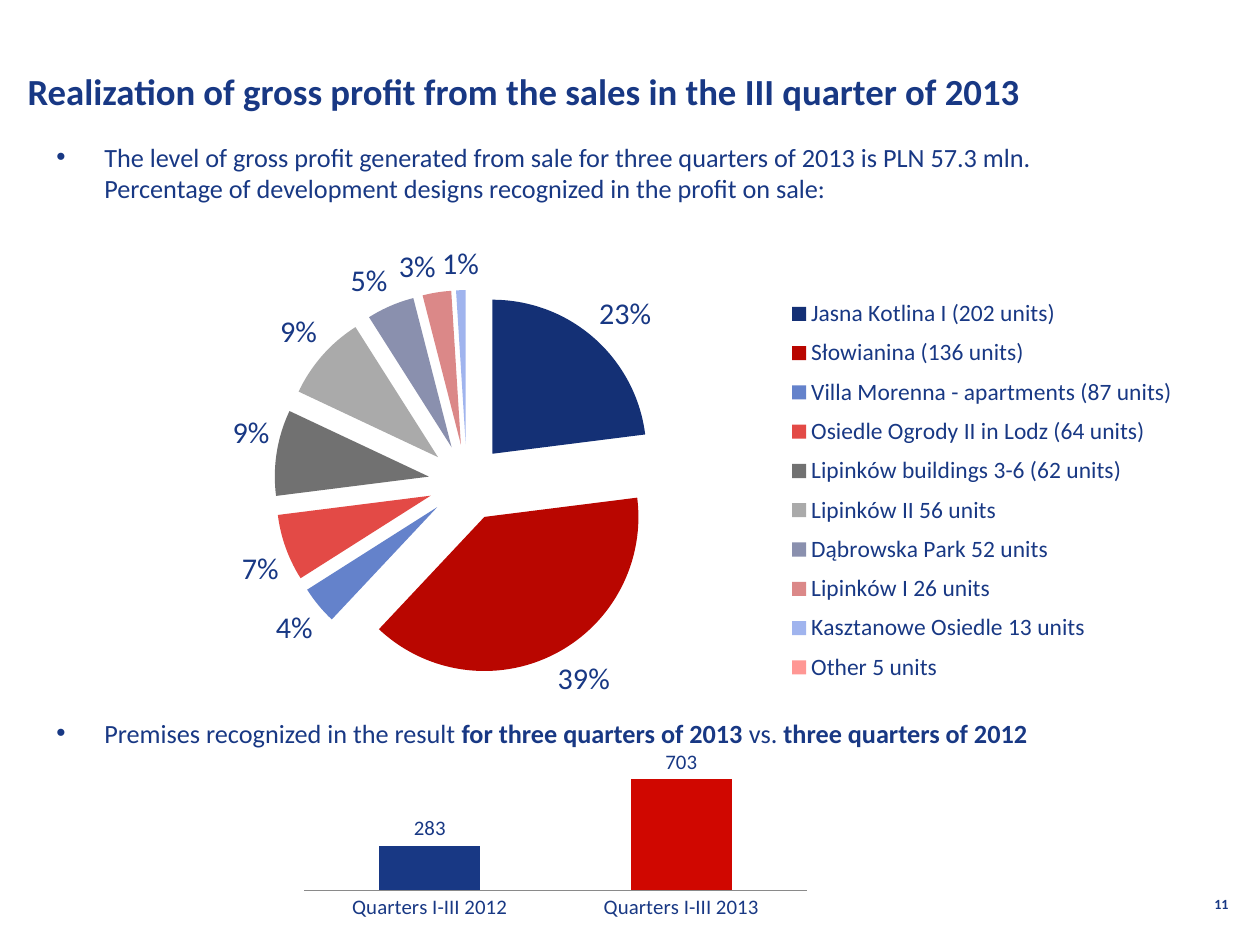
from dataclasses import dataclass

from lxml import etree
from pptx import Presentation
from pptx.chart.data import CategoryChartData
from pptx.dml.color import RGBColor as RGB
from pptx.enum.chart import XL_CHART_TYPE as CT, XL_LABEL_POSITION as LP
from pptx.enum.chart import XL_LEGEND_POSITION as LEG, XL_TICK_MARK as TM
from pptx.enum.text import MSO_ANCHOR as ANCHOR, PP_ALIGN as ALIGN
from pptx.oxml.ns import qn
from pptx.util import Inches, Pt


@dataclass(frozen=True)
class Theme:
    font: str = "Calibri"
    navy: str = "183884"
    red: str = "D00700"
    axis: str = "8A8A8A"
    slices: tuple = ("143075", "B90600", "6482CB", "E34A46", "717171",
                     "AAAAAA", "8A90AE", "DB8888", "A0B4EE", "FF9794")
    title: float = 21
    body: float = 15
    number: float = 8
    pie_label: float = 17.2
    legend: float = 13.4
    column_label: float = 11.9


T = Theme()
COLS, ROWS = 40, 30
WIDTH, HEIGHT = Inches(10), Inches(7.5)

PROFIT_SHARES = {
    "Jasna Kotlina I (202 units)": 23,
    "Słowianina (136 units)": 39,
    "Villa Morenna - apartments (87 units)": 4,
    "Osiedle Ogrody II in Lodz (64 units)": 7,
    "Lipinków buildings 3-6 (62 units)": 9,
    "Lipinków II 56 units": 9,
    "Dąbrowska Park 52 units": 5,
    "Lipinków I 26 units": 3,
    "Kasztanowe Osiedle 13 units": 1,
    "Other 5 units": 0,
}
PREMISES = {"Quarters I-III 2012": 283, "Quarters I-III 2013": 703}


def grid(col, row, cols, rows):
    """Turn grid columns and rows into left, top, width, height."""
    return (int(WIDTH * col / COLS), int(HEIGHT * row / ROWS),
            int(WIDTH * cols / COLS), int(HEIGHT * rows / ROWS))


def set_font(font, size, bold=False):
    for name, value in dict(name=T.font, size=Pt(size), bold=bold).items():
        setattr(font, name, value)
    font.color.rgb = RGB.from_string(T.navy)


def add_text(s, box, runs, size, align=ALIGN.LEFT, anchor=ANCHOR.TOP, bullet=False):
    """Add one paragraph made of (text, bold) runs; "\\n" breaks a line."""
    tf = s.shapes.add_textbox(*box).text_frame
    tf.word_wrap, tf.vertical_anchor = True, anchor
    p = tf.paragraphs[0]
    p.alignment = align
    if bullet:
        pPr = p._p.get_or_add_pPr()
        indent = Inches(0.38)
        pPr.set("marL", str(indent))
        pPr.set("indent", str(-indent))
        etree.SubElement(pPr, qn("a:buFont")).set("typeface", "Arial")
        etree.SubElement(pPr, qn("a:buChar")).set("char", "•")
    for text, bold in runs:
        for i, line in enumerate(text.split("\n")):
            if i:
                p.add_line_break()
            r = p.add_run()
            r.text = line
            set_font(r.font, size, bold)


def set_layout(parent, place, x, y, w, h, inner=False):
    """Fix a chart part at shares of the chart's size."""
    for old in parent.findall(qn("c:layout")):
        parent.remove(old)
    layout = etree.Element(qn("c:layout"))
    manual = etree.SubElement(layout, qn("c:manualLayout"))
    values = {"layoutTarget": "inner"} if inner else {}
    values |= dict(xMode="edge", yMode="edge", x=x, y=y, w=w, h=h)
    for tag, value in values.items():
        etree.SubElement(manual, qn(f"c:{tag}")).set("val", str(value))
    parent.insert(place, layout)


def add_chart(s, box, kind, data, size, plot_box):
    chart_data = CategoryChartData()
    chart_data.categories = list(data)
    chart_data.add_series("Series 1", list(data.values()))
    chart = s.shapes.add_chart(kind, *box, chart_data).chart
    chart.has_title = chart.has_legend = False
    set_font(chart.font, size)
    set_layout(chart._chartSpace.chart.plotArea, 0, *plot_box, inner=True)
    return chart


def style_series(series, colors, size, **label_format):
    for i, color in enumerate(colors):
        fill = series.points[i].format.fill
        fill.solid()
        fill.fore_color.rgb = RGB.from_string(color)
    labels = series.data_labels
    set_font(labels.font, size)
    for name, value in dict(position=LP.OUTSIDE_END, **label_format).items():
        setattr(labels, name, value)


def profit_pie(s, box):
    chart = add_chart(s, box, CT.PIE, PROFIT_SHARES, T.pie_label,
                      (0.113, 0.122, 0.527, 0.687))
    series = chart.plots[0].series[0]
    explosion = etree.Element(qn("c:explosion"))
    explosion.set("val", "25")
    series._element.find(qn("c:tx")).addnext(explosion)
    style_series(series, T.slices, T.pie_label, show_percentage=True, show_value=False,
                 number_format="0%", number_format_is_linked=False)

    # The empty last share carries no label.
    hidden = etree.Element(qn("c:dLbl"))
    for tag, value in (("idx", len(PROFIT_SHARES) - 1), ("delete", 1)):
        etree.SubElement(hidden, qn(f"c:{tag}")).set("val", str(value))
    series.data_labels._element.insert(0, hidden)

    chart.has_legend = True
    legend = chart.legend
    legend.position, legend.include_in_layout = LEG.RIGHT, False
    set_font(legend.font, T.legend)
    set_layout(legend._element, 1, 0.66, 0.12, 0.33, 0.72)


def premises_columns(s, box):
    chart = add_chart(s, box, CT.COLUMN_CLUSTERED, PREMISES, T.column_label,
                      (0.02, 0.08, 0.96, 0.74))
    plot = chart.plots[0]
    plot.gap_width, plot.overlap, plot.vary_by_categories = 150, -25, False
    style_series(plot.series[0], (T.navy, T.red), T.column_label, show_value=True)

    values = chart.value_axis
    for name, value in dict(minimum_scale=0, maximum_scale=800, visible=False,
                            has_major_gridlines=False).items():
        setattr(values, name, value)
    categories = chart.category_axis
    categories.major_tick_mark = categories.minor_tick_mark = TM.NONE
    categories.format.line.color.rgb = RGB.from_string(T.axis)
    categories.format.line.width = Pt(0.75)


def main():
    prs = Presentation()
    prs.slide_width, prs.slide_height = WIDTH, HEIGHT
    s = prs.slides.add_slide(prs.slide_layouts[6])

    add_text(s, grid(0.48, 1.44, 33.5, 2.88),
             [("Realization of gross profit from the sales in the III quarter of 2013", True)],
             T.title, anchor=ANCHOR.MIDDLE)
    add_text(s, grid(1.4, 4.28, 36, 3.76),
             [("The level of gross profit generated from sale for three quarters of 2013 "
               "is PLN 57.3 mln.\nPercentage of development designs recognized "
               "in the profit on sale:", False)],
             T.body, bullet=True)
    profit_pie(s, grid(1, 7.04, 36.72, 17.8))
    premises_columns(s, grid(9.32, 23.8, 16.64, 5.44))
    add_text(s, grid(1.4, 22.56, 36, 1.24),
             [("Premises recognized in the result ", False),
              ("for three quarters of 2013", True),
              (" vs. ", False),
              ("three quarters of 2012", True)],
             T.body, bullet=True)
    add_text(s, grid(30.08, 28.24, 9.32, 1.48), [("11", True)], T.number, align=ALIGN.RIGHT)
    prs.save("out.pptx")


if __name__ == "__main__":
    main()
